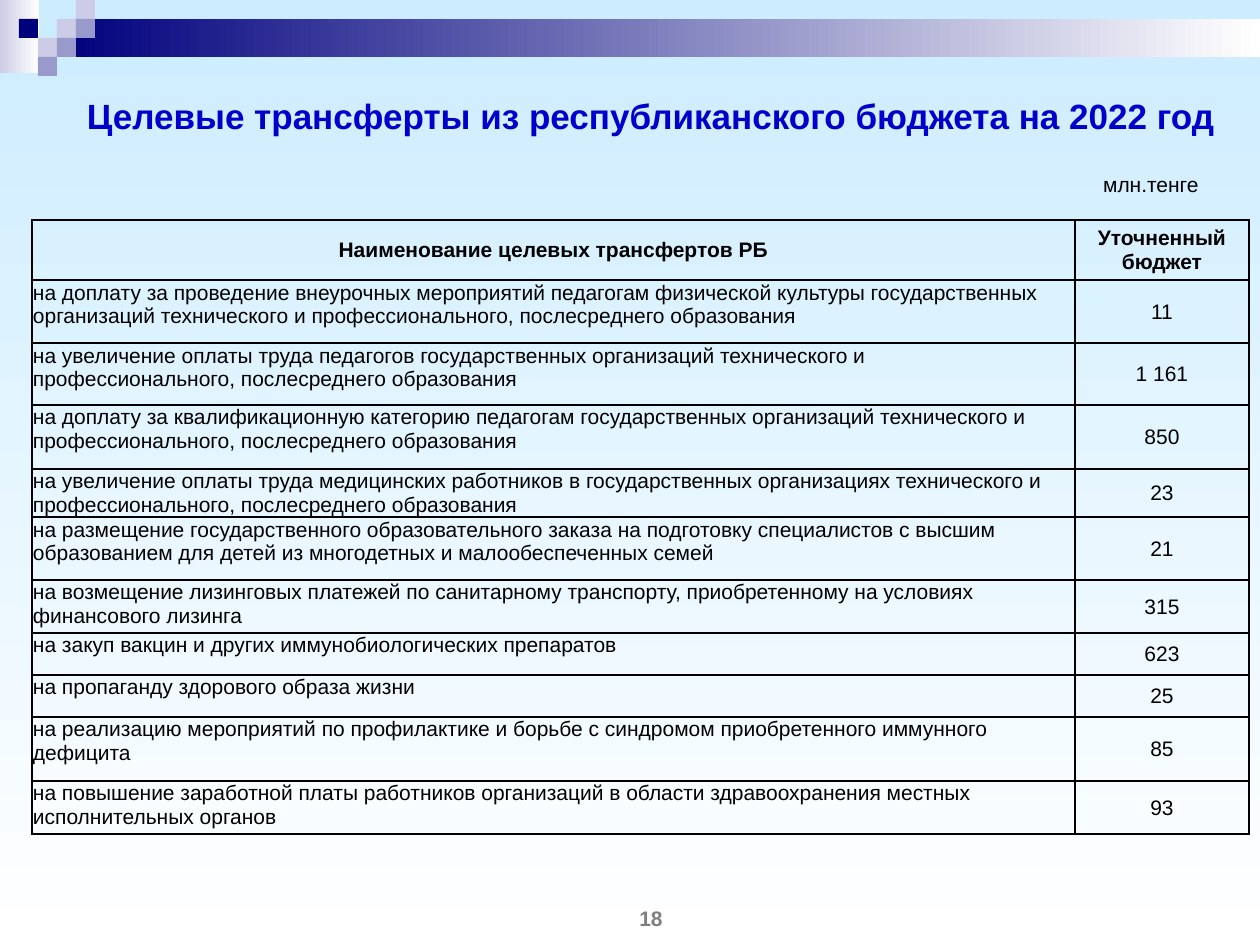
from lxml.etree import SubElement
from pptx import Presentation
from pptx.dml.color import RGBColor
from pptx.enum.shapes import MSO_SHAPE
from pptx.enum.text import MSO_ANCHOR as ANCHOR, PP_ALIGN as ALIGN
from pptx.oxml.ns import qn
from pptx.util import Emu, Pt

PX = 914400 // 126
FONT = "Arial"
BLACK = RGBColor(0, 0, 0)
WHITE = RGBColor(255, 255, 255)
GRAY = RGBColor(0x7F, 0x7F, 0x7F)
BLUE = RGBColor(0, 0, 0xCC)
NAVY = RGBColor(0, 0, 0x7D)
LILAC = RGBColor(0xCC, 0xCC, 0xE6)
VIOLET = RGBColor(0x99, 0x99, 0xCC)
SKY = RGBColor(0xCC, 0xEC, 0xFF)

# Decoration: gradient bands, then squares as (column, row, colour)
BANDS = [((0, 0, 39, 73), LILAC), ((57, 19, 1203, 38), NAVY)]
UNIT = 19
SQUARES = [
    (3, 1, LILAC), (4, 0, LILAC), (4, 1, VIOLET), (2, 2, LILAC),
    (1, 1, NAVY), (3, 2, VIOLET), (2, 3, VIOLET),
]

# Text, box, size, bold, colour
LABELS = [
    ("Целевые трансферты из республиканского бюджета на 2022 год",
     (50, 73, 1202, 84), 20, True, BLUE),
    ("млн.тенге", (1075, 158, 152, 53), 12, False, BLACK),
    ("18", (525, 892, 252, 53), 12, True, GRAY),
]

TABLE_LEFT, TABLE_TOP = 32, 220
COLUMNS = [1043, 174]
# Row height, name, value
ROWS = [
    (60, "Наименование целевых трансфертов РБ", "Уточненный бюджет"),
    (63, "на доплату за проведение внеурочных мероприятий педагогам физической культуры "
         "государственных организаций технического и профессионального, "
         "послесреднего образования", "11"),
    (62, "на увеличение оплаты труда педагогов государственных организаций технического и "
         "профессионального, послесреднего образования", "1 161"),
    (64, "на доплату за квалификационную категорию педагогам государственных организаций "
         "технического и профессионального, послесреднего образования", "850"),
    (48, "на увеличение оплаты труда медицинских работников в государственных организациях "
         "технического и профессионального, послесреднего образования", "23"),
    (63, "на размещение государственного образовательного заказа на подготовку специалистов "
         "с высшим образованием для детей из многодетных и малообеспеченных семей", "21"),
    (53, "на возмещение лизинговых платежей по санитарному транспорту, приобретенному на "
         "условиях финансового лизинга", "315"),
    (42, "на закуп вакцин и других иммунобиологических препаратов", "623"),
    (42, "на пропаганду здорового образа жизни", "25"),
    (64, "на реализацию мероприятий по профилактике и борьбе с синдромом приобретенного "
         "иммунного дефицита", "85"),
    (53, "на повышение заработной платы работников организаций в области здравоохранения "
         "местных исполнительных органов", "93"),
]


def px(*lengths):
    return [Emu(n * PX) for n in lengths]


def set_gradient(fill, start, end, angle=0):
    fill.gradient()
    fill.gradient_angle = angle
    for stop, color, position in zip(fill.gradient_stops, (start, end), (0, 1)):
        stop.color.rgb = color
        stop.position = position


def add_rect(slide, box):
    sp = slide.shapes.add_shape(MSO_SHAPE.RECTANGLE, *px(*box))
    sp.shadow.inherit = False
    sp.line.fill.background()
    return sp


def write(tf, text, size, bold, color, align):
    p = tf.paragraphs[0]
    p.alignment = align
    r = p.add_run()
    r.text = text
    r.font.name = FONT
    r.font.size = Pt(size)
    r.font.bold = bold
    r.font.color.rgb = color


def add_label(slide, text, box, size, bold, color):
    tf = slide.shapes.add_textbox(*px(*box)).text_frame
    tf.word_wrap = True
    tf.vertical_anchor = ANCHOR.MIDDLE
    write(tf, text, size, bold, color, ALIGN.CENTER)


def set_borders(cell):
    tcPr = cell._tc.get_or_add_tcPr()
    for side in ("lnL", "lnR", "lnT", "lnB"):
        ln = SubElement(tcPr, qn(f"a:{side}"), w=str(Pt(1)))
        fill = SubElement(ln, qn("a:solidFill"))
        SubElement(fill, qn("a:srgbClr"), val=str(BLACK))


def fill_cell(cell, text, header, centred):
    set_borders(cell)
    cell.fill.background()
    side, top, bottom = px(13, 6, 6) if header else px(1, 1, 0)
    cell.margin_left = cell.margin_right = side
    cell.margin_top, cell.margin_bottom = top, bottom
    cell.vertical_anchor = ANCHOR.MIDDLE if centred else ANCHOR.TOP
    write(cell.text_frame, text, 12, header, BLACK,
          ALIGN.CENTER if centred else ALIGN.LEFT)


def add_budget_table(slide):
    heights = [row[0] for row in ROWS]
    box = px(TABLE_LEFT, TABLE_TOP, sum(COLUMNS), sum(heights))
    table = slide.shapes.add_table(len(ROWS), len(COLUMNS), *box).table
    table.first_row = table.horz_banding = False
    for column, width in zip(table.columns, px(*COLUMNS)):
        column.width = width
    for i, (height, *texts) in enumerate(ROWS):
        table.rows[i].height = Emu(height * PX)
        for j, text in enumerate(texts):
            header = i == 0
            fill_cell(table.cell(i, j), text, header, header or j == 1)


def main():
    prs = Presentation()
    prs.slide_width, prs.slide_height = px(1260, 945)
    slide = prs.slides.add_slide(prs.slide_layouts[6])
    set_gradient(slide.background.fill, SKY, WHITE, 270)
    for box, color in BANDS:
        set_gradient(add_rect(slide, box).fill, color, WHITE)
    for column, row, color in SQUARES:
        sp = add_rect(slide, (column * UNIT, row * UNIT, UNIT, UNIT))
        sp.fill.solid()
        sp.fill.fore_color.rgb = color
    add_budget_table(slide)
    for label in LABELS:
        add_label(slide, *label)
    prs.save("out.pptx")


if __name__ == "__main__":
    main()
